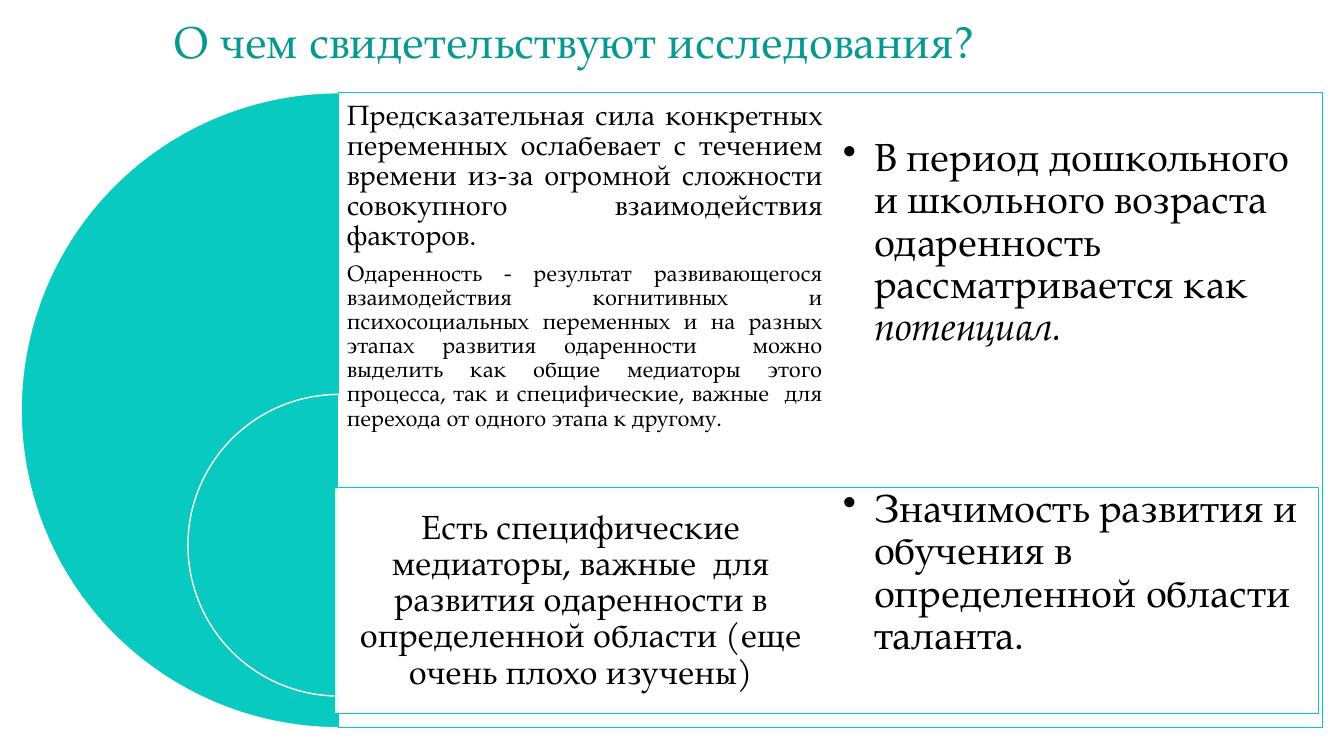
from lxml.etree import SubElement
from pptx import Presentation
from pptx.dml.color import RGBColor
from pptx.enum.shapes import MSO_SHAPE as Shape
from pptx.enum.text import MSO_ANCHOR as Anchor, PP_ALIGN as Align
from pptx.oxml.ns import qn
from pptx.util import Inches, Pt

FONT = "TeX Gyre Pagella"
TEAL, DARK, WHITE, BLACK = "08CAC1", "069891", "FFFFFF", "000000"
WIDE, HIGH = 13.33, 7.5

TITLE = "О чем свидетельствуют исследования?"
POWER = ("Предсказательная сила конкретных переменных ослабевает с течением времени "
         "из-за огромной сложности совокупного взаимодействия факторов.")
GIFT = ("Одаренность - результат развивающегося взаимодействия когнитивных и "
        "психосоциальных переменных и на разных этапах развития одаренности  можно "
        "выделить как общие медиаторы этого процесса, так и специфические, важные  "
        "для перехода от одного этапа к другому.")
FIELD = ("Есть специфические медиаторы, важные  для развития одаренности в "
         "определенной области (еще очень плохо изучены)")
CHILD = "В период дошкольного и школьного возраста одаренность рассматривается как "
VALUE = "Значимость развития и обучения в определенной области таланта."


def color(code):
    """Turn a hex string into a colour."""
    return RGBColor.from_string(code)


def inches(box):
    """Turn a box of inches into slide lengths."""
    return [Inches(n) for n in box]


def frame(slide, box, inset, anchor):
    """Add a wrapping text box and return its text frame."""
    area = slide.shapes.add_textbox(*inches(box)).text_frame
    area.word_wrap = True
    area.vertical_anchor = anchor
    area.margin_left = area.margin_right = Inches(inset)
    area.margin_top = area.margin_bottom = Inches(inset)
    return area


def write(area, text, size, ink=BLACK, align=Align.LEFT, after=0.0, bullet=False, tail=""):
    """Write one paragraph, with an optional bullet and italic tail."""
    para = area.paragraphs[0]
    if para.runs:
        para = area.add_paragraph()
    if bullet:
        props = para._p.get_or_add_pPr()
        props.set("marL", str(Inches(0.31)))
        props.set("indent", str(-Inches(0.31)))
        SubElement(props, qn("a:buChar"), char="•")
    para.alignment = align
    para.line_spacing = 0.9
    para.space_after = Pt(size * after)
    for part, slant in ((text, False), (tail, True)):
        if part:
            run = para.add_run()
            run.text = part
            run.font.name, run.font.size = FONT, Pt(size)
            run.font.italic = slant
            run.font.color.rgb = color(ink)


def solid(slide, kind, box, fill, line, alpha=100):
    """Add a filled and outlined shape."""
    item = slide.shapes.add_shape(kind, *inches(box))
    item.shadow.inherit = False
    item.fill.solid()
    item.fill.fore_color.rgb = color(fill)
    item.line.color.rgb = color(line)
    item.line.width = Pt(1)
    if alpha < 100:
        tone = item.fill._xPr.find(qn("a:solidFill"))[0]
        SubElement(tone, qn("a:alpha"), val=str(alpha * 1000))
    return item


def level(slide, axis, top, size, panel):
    """Draw a half disk left of the axis and the panel beside it."""
    disk = solid(slide, Shape.PIE, (axis - size / 2, top, size, size), TEAL, WHITE)
    disk.adjustments[0], disk.adjustments[1] = 54, 162
    solid(slide, Shape.RECTANGLE, panel, WHITE, TEAL, alpha=90)


def heading(slide, box):
    """Place the slide title."""
    area = frame(slide, box, 0.1, Anchor.BOTTOM)
    area.margin_top = area.margin_bottom = Inches(0.05)
    write(area, TITLE, 32, ink=DARK)


def stage(slide, box):
    """Place two nested levels with a left and a right text in each."""
    left, top, width, height = box
    axis, row = left + height / 2, 0.475 * height
    span = width - height / 2
    half, low = span / 2, top + 0.622 * height
    deep, inner = 0.356 * height, axis - 0.04
    level(slide, axis, top, height, (axis, top, span, height))
    level(slide, axis, top + row, row, (inner, low, span, deep))

    area = frame(slide, (axis, top, half, row), 0.08, Anchor.TOP)
    write(area, POWER, 20, align=Align.JUSTIFY, after=0.35)
    write(area, GIFT, 16, align=Align.JUSTIFY, after=0.35)
    area = frame(slide, (inner, low, half, deep), 0.1, Anchor.MIDDLE)
    write(area, FIELD, 24, align=Align.CENTER, after=0.35)
    area = frame(slide, (axis + half, top, half, row), 0.12, Anchor.MIDDLE)
    write(area, CHILD, 28, after=0.15, bullet=True, tail="потенциал.")
    area = frame(slide, (axis + half, low - 0.11, half, deep), 0.12, Anchor.TOP)
    write(area, VALUE, 28, after=0.15, bullet=True)


def main():
    """Build and save the slide."""
    deck = Presentation()
    deck.slide_width, deck.slide_height = Inches(WIDE), Inches(HIGH)
    slide = deck.slides.add_slide(deck.slide_layouts[6])
    heading(slide, (1.62, 0.21, 10.5, 0.52))
    stage(slide, (0.21, 0.92, 12.91, 6.3))
    deck.save("out.pptx")


if __name__ == "__main__":
    main()
